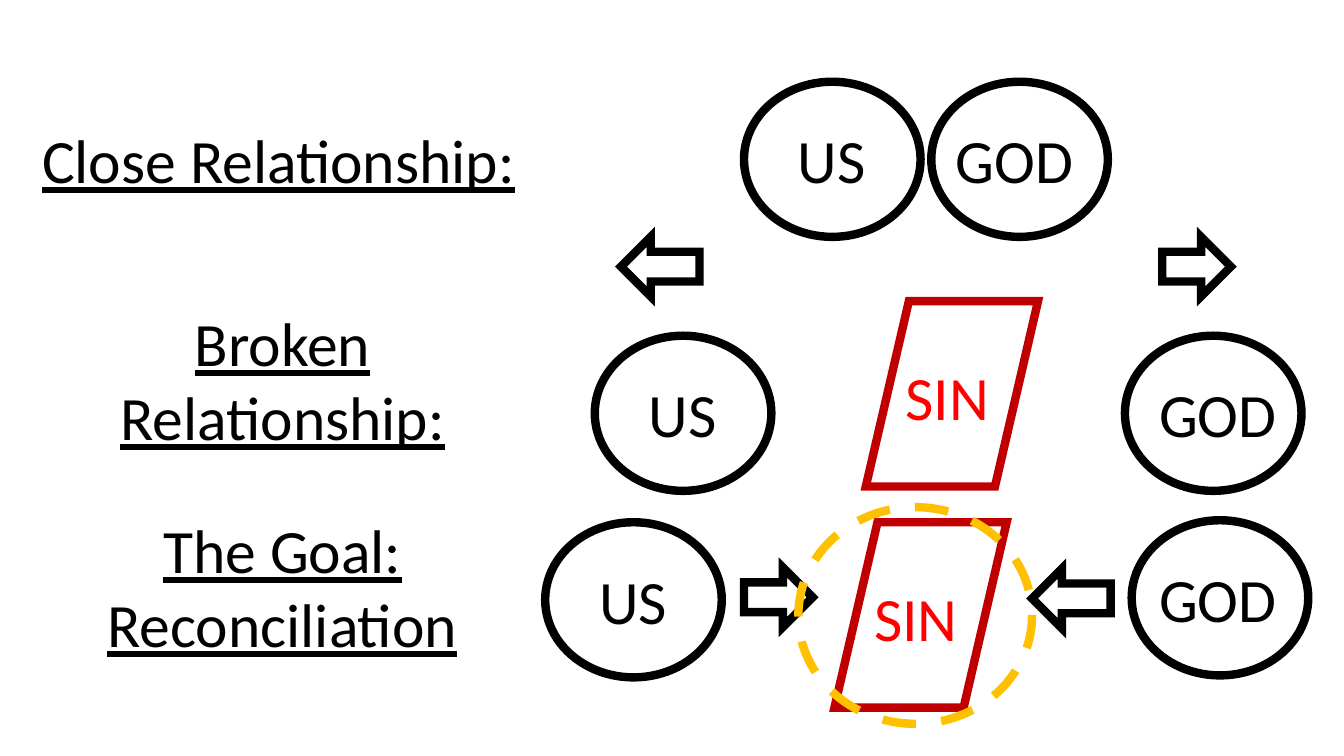
"""Build a slide showing close, broken and reconciled relationships."""
from dataclasses import dataclass

from lxml import etree
from pptx import Presentation
from pptx.dml.color import RGBColor
from pptx.enum.dml import MSO_LINE
from pptx.enum.shapes import MSO_SHAPE
from pptx.enum.text import MSO_AUTO_SIZE, PP_ALIGN
from pptx.oxml.ns import qn
from pptx.util import Cm, Pt

ELLIPSE = MSO_SHAPE.OVAL
PARALLELOGRAM = MSO_SHAPE.PARALLELOGRAM
LEFT_ARROW = MSO_SHAPE.LEFT_ARROW
RIGHT_ARROW = MSO_SHAPE.RIGHT_ARROW
DASH = MSO_LINE.DASH
GROW = MSO_AUTO_SIZE.SHAPE_TO_FIT_TEXT
LEFT, CENTER = PP_ALIGN.LEFT, PP_ALIGN.CENTER

BLACK = RGBColor(0x00, 0x00, 0x00)
DARK_RED = RGBColor(0xC0, 0x00, 0x00)
RED = RGBColor(0xFF, 0x00, 0x00)
GOLD = RGBColor(0xFF, 0xC0, 0x00)

LINE_HEIGHT = 2.13


@dataclass(frozen=True)
class Figure:
    kind: int
    left: float
    top: float
    width: float
    height: float
    color: RGBColor = BLACK
    dash: int | None = None


@dataclass(frozen=True)
class Party:
    name: str
    left: float
    top: float
    name_shift: float
    name_width: float


@dataclass(frozen=True)
class Heading:
    text: str
    left: float
    top: float
    width: float
    height: float
    align: int = CENTER


PARTIES = [
    Party("US", 18.75, 2.06, 1.11, 2.24),
    Party("GOD", 23.47, 2.06, 0.36, 3.71),
    Party("US", 14.99, 8.46, 1.11, 2.24),
    Party("GOD", 28.35, 8.46, 0.61, 3.71),
    Party("US", 13.74, 13.16, 1.11, 2.24),
    Party("GOD", 28.52, 13.11, 0.44, 3.71),
]
HEADINGS = [
    Heading("Close Relationship:", 0.81, 2.95, 12.62, LINE_HEIGHT, LEFT),
    Heading("Broken Relationship:", 2.49, 7.57, 9.27, 4.01),
    Heading("The Goal: Reconciliation", 2.18, 12.78, 9.88, 4.01),
]
ARROWS = [
    Figure(LEFT_ARROW, 15.65, 5.97, 1.98, 1.5),
    Figure(RIGHT_ARROW, 29.29, 5.97, 1.73, 1.5),
    Figure(RIGHT_ARROW, 18.75, 14.3, 1.73, 1.5),
    Figure(LEFT_ARROW, 26.01, 14.33, 1.98, 1.5),
]
BARRIERS = [(21.82, 7.59), (21.03, 13.16)]
FOCUS_RING = Figure(ELLIPSE, 20.12, 12.78, 5.89, 5.46, GOLD, DASH)


def draw_figure(page, figure: Figure) -> None:
    shape = page.shapes.add_shape(
        figure.kind, Cm(figure.left), Cm(figure.top), Cm(figure.width), Cm(figure.height)
    )
    shape.shadow.inherit = False
    shape.fill.background()
    shape.line.color.rgb = figure.color
    shape.line.width = Pt(6)
    if figure.dash is not None:
        shape.line.dash_style = figure.dash
    outline = shape.element.spPr.find(qn("a:ln"))
    etree.SubElement(outline, qn("a:miter"), lim="800000")


def draw_text(
    page, text: str, *, left: float, top: float, width: float,
    height: float = LINE_HEIGHT, color: RGBColor = BLACK,
    underline: bool = False, align: int = LEFT,
) -> None:
    box = page.shapes.add_textbox(Cm(left), Cm(top), Cm(width), Cm(height))
    frame = box.text_frame
    frame.word_wrap = height > LINE_HEIGHT
    frame.auto_size = GROW
    para = frame.paragraphs[0]
    para.alignment = align
    span = para.add_run()
    span.text = text
    span.font.name = "Calibri"
    span.font.size = Pt(44)
    span.font.color.rgb = color
    if underline:
        span.font.underline = True


def draw_party(page, party: Party) -> None:
    draw_figure(page, Figure(ELLIPSE, party.left, party.top, 4.45, 3.91))
    draw_text(page, party.name, left=party.left + party.name_shift,
              top=party.top + 0.89, width=party.name_width)


def draw_barrier(page, left: float, top: float) -> None:
    draw_figure(page, Figure(PARALLELOGRAM, left, top, 4.34, 4.67, DARK_RED))
    draw_text(page, "SIN", left=left + 0.75, top=top + 1.33, width=2.84, color=RED)


def main() -> None:
    deck = Presentation()
    deck.slide_width, deck.slide_height = Cm(33.87), Cm(19.05)
    page = deck.slides.add_slide(deck.slide_layouts[6])
    for heading in HEADINGS:
        draw_text(page, heading.text, left=heading.left, top=heading.top,
                  width=heading.width, height=heading.height,
                  underline=True, align=heading.align)
    for party in PARTIES:
        draw_party(page, party)
    for arrow in ARROWS:
        draw_figure(page, arrow)
    for left, top in BARRIERS:
        draw_barrier(page, left, top)
    draw_figure(page, FOCUS_RING)
    deck.save("out.pptx")


if __name__ == "__main__":
    main()
